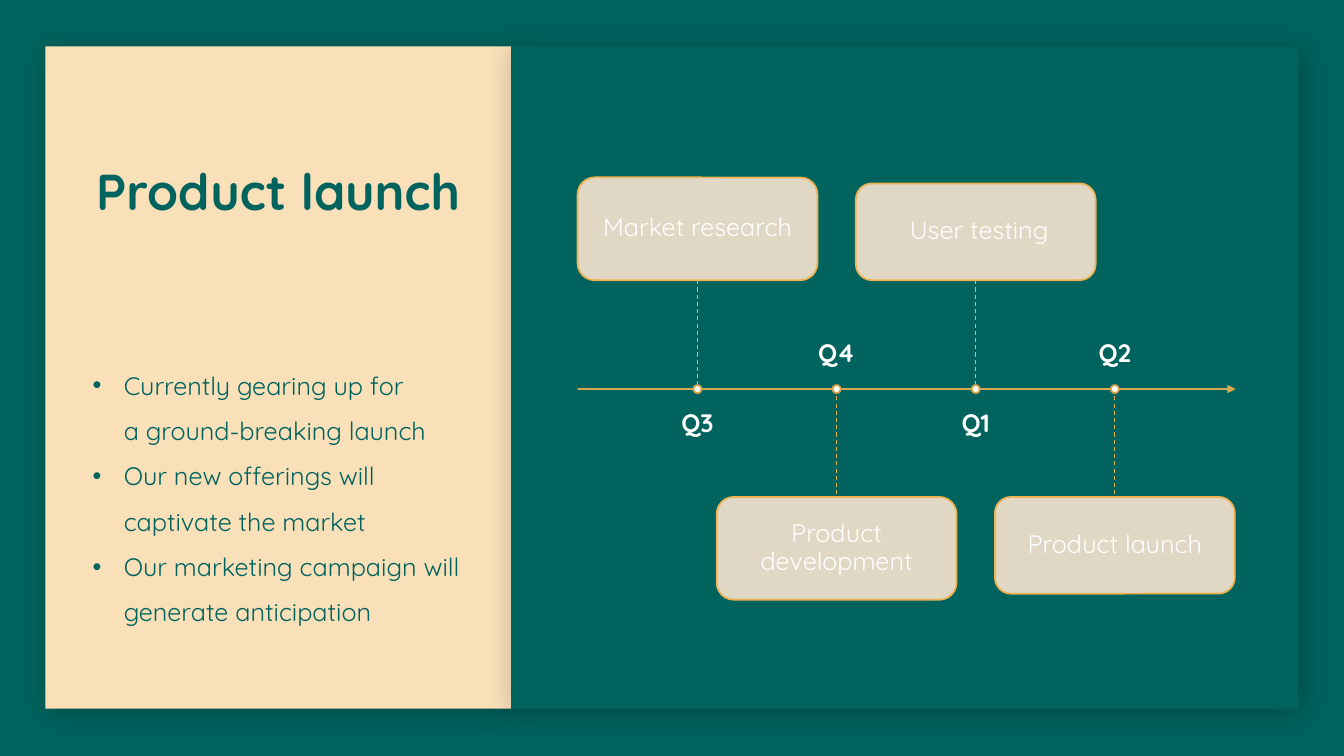
from lxml import etree
from pptx import Presentation
from pptx.dml.color import RGBColor
from pptx.enum.dml import MSO_LINE
from pptx.enum.shapes import MSO_CONNECTOR, MSO_SHAPE
from pptx.enum.text import MSO_ANCHOR, PP_ALIGN
from pptx.oxml.ns import qn
from pptx.util import Emu, Inches, Pt

RECT, ROUND, OVAL = MSO_SHAPE.RECTANGLE, MSO_SHAPE.ROUNDED_RECTANGLE, MSO_SHAPE.OVAL
STRAIGHT, DASH = MSO_CONNECTOR.STRAIGHT, MSO_LINE.DASH
TOP, MIDDLE, BOTTOM = MSO_ANCHOR.TOP, MSO_ANCHOR.MIDDLE, MSO_ANCHOR.BOTTOM
LEFT, CENTER = PP_ALIGN.LEFT, PP_ALIGN.CENTER

FONT = "Quicksand"
COLORS = {"green": "00635D", "sand": "F9E0B9", "card": "F9E4D0",
          "gold": "EFB251", "ring": "D9A24A", "white": "FFFFFF", "black": "000000"}

AXIS_Y = 3.86
FIRST_X, STEP = 6.92, 1.38
CARD_W, CARD_BOTTOM, CARD_TOP = 2.38, 2.78, 4.93
LABEL_W, LABEL_H, DOT = 2.1, 0.64, 0.08

# Quarter, milestone, card height; cards alternate above and below the axis
MILESTONES = [("Q3", "Market research", 1.02),
              ("Q4", "Product development", 1.02),
              ("Q1", " User testing", 0.96),
              ("Q2", "Product launch", 0.96)]
BULLETS = ["Currently gearing up for \na ground-breaking launch",
           "Our new offerings will captivate the market",
           "Our marketing campaign will generate anticipation"]


def rgb(name):
    return RGBColor.from_string(COLORS[name])


def sub(parent, tag, **attrs):
    return etree.SubElement(parent, qn(tag), {k: str(v) for k, v in attrs.items()})


def set_alpha(fill_parent, percent):
    color = fill_parent.find(qn("a:solidFill"))[0]
    sub(color, "a:alpha", val=percent * 1000)


def add_bullet(p, indent):
    pPr = p._p.get_or_add_pPr()
    pPr.set("marL", str(Inches(indent)))
    pPr.set("indent", str(-Inches(indent)))
    sub(sub(pPr, "a:buClr"), "a:srgbClr", val=COLORS["green"])
    sub(pPr, "a:buFont", typeface="Arial")
    sub(pPr, "a:buChar", char="•")


def write(shape, paragraphs, size=18, color="white", bold=False, align=CENTER,
          anchor=MIDDLE, spacing=0.9, insets=(0, 0, 0, 0), bullet_indent=None):
    tf = shape.text_frame
    tf.word_wrap = True
    tf.vertical_anchor = anchor
    tf.margin_left, tf.margin_top, tf.margin_right, tf.margin_bottom = map(Inches, insets)
    for i, text in enumerate(paragraphs):
        p = tf.add_paragraph() if i else tf.paragraphs[0]
        p.alignment = align
        p.line_spacing = spacing
        if bullet_indent:
            add_bullet(p, bullet_indent)
        for j, line in enumerate(text.split("\n")):
            if j:
                p.add_line_break()
            r = p.add_run()
            r.text = line
            r.font.name, r.font.size, r.font.bold = FONT, Pt(size), bold
            r.font.color.rgb = rgb(color)


def add_text(s, x, y, w, h, paragraphs, **fmt):
    write(s.shapes.add_textbox(*map(Inches, (x, y, w, h))), paragraphs, **fmt)


def add_box(s, kind, x, y, w, h, fill, line=None, alpha=None):
    sp = s.shapes.add_shape(kind, *map(Inches, (x, y, w, h)))
    sp.shadow.inherit = False
    sp.fill.solid()
    sp.fill.fore_color.rgb = rgb(fill)
    if alpha:
        set_alpha(sp._element.spPr, alpha)
    if line:
        sp.line.color.rgb = rgb(line)
        sp.line.width = Pt(1.25)
    else:
        sp.line.fill.background()
    return sp


def add_panel(s, x, w, fill):
    sp = add_box(s, RECT, x, 0.46, w, 6.57, fill)
    effects = sp._element.spPr.find(qn("a:effectLst"))
    shadow = sub(effects, "a:outerShdw", blurRad=Pt(20), dist=Pt(4),
                 dir=45 * 60000, algn="tl", rotWithShape=0)
    sub(sub(shadow, "a:srgbClr", val=COLORS["black"]), "a:alpha", val=25000)


def add_line(s, x1, y1, x2, y2, width, dash=None, alpha=None, arrow=False):
    c = s.shapes.add_connector(STRAIGHT, *map(Inches, (x1, y1, x2, y2)))
    c.line.color.rgb = rgb("gold")
    c.line.width = Pt(width)
    if dash:
        c.line.dash_style = dash
    ln = c._element.spPr.find(qn("a:ln"))
    if alpha:
        set_alpha(ln, alpha)
    if arrow:
        sub(ln, "a:tailEnd", type="triangle")
    sub(c._element.spPr, "a:effectLst")


def add_milestone(s, x, quarter, name, height, above):
    card_y = CARD_BOTTOM - height if above else CARD_TOP
    card = add_box(s, ROUND, x - CARD_W / 2, card_y, CARD_W, height,
                   "card", line="gold", alpha=90)
    write(card, [name], insets=(0.17,) * 4)
    y1, y2 = (CARD_BOTTOM, AXIS_Y) if above else (AXIS_Y, CARD_TOP)
    add_line(s, x, y1, x, y2, 0.75, dash=DASH)
    # The quarter sits on the side of the axis away from its card
    label_y, anchor = (4.07, TOP) if above else (3.01, BOTTOM)
    add_text(s, x - LABEL_W / 2, label_y, LABEL_W, LABEL_H, [quarter],
             bold=True, anchor=anchor)
    add_box(s, OVAL, x - DOT / 2, AXIS_Y - DOT / 2, DOT, DOT, "white", line="ring")


def main():
    prs = Presentation()
    prs.slide_width, prs.slide_height = Emu(12192000), Inches(7.5)
    s = prs.slides.add_slide(prs.slide_layouts[6])
    s.background.fill.solid()
    s.background.fill.fore_color.rgb = rgb("green")

    # Panels
    add_panel(s, 0.45, 4.62, "sand")
    add_panel(s, 5.07, 7.81, "green")

    # Title and bullets
    add_text(s, 0.58, 0.69, 4.36, 2.4, ["Product launch"], size=36, color="green",
             bold=True, spacing=1.0, insets=(0.1, 0.05, 0.1, 0.05))
    add_text(s, 0.82, 3.47, 4.13, 3.41, BULLETS, color="green", align=LEFT, anchor=TOP,
             spacing=1.5, insets=(0.1, 0.05, 0.3, 0.05), bullet_indent=0.31)

    # Timeline
    add_line(s, 5.73, AXIS_Y, 12.26, AXIS_Y, 1.25, alpha=90, arrow=True)
    for i, (quarter, name, height) in enumerate(MILESTONES):
        add_milestone(s, FIRST_X + i * STEP, quarter, name, height, above=i % 2 == 0)

    prs.save("out.pptx")


if __name__ == "__main__":
    main()
